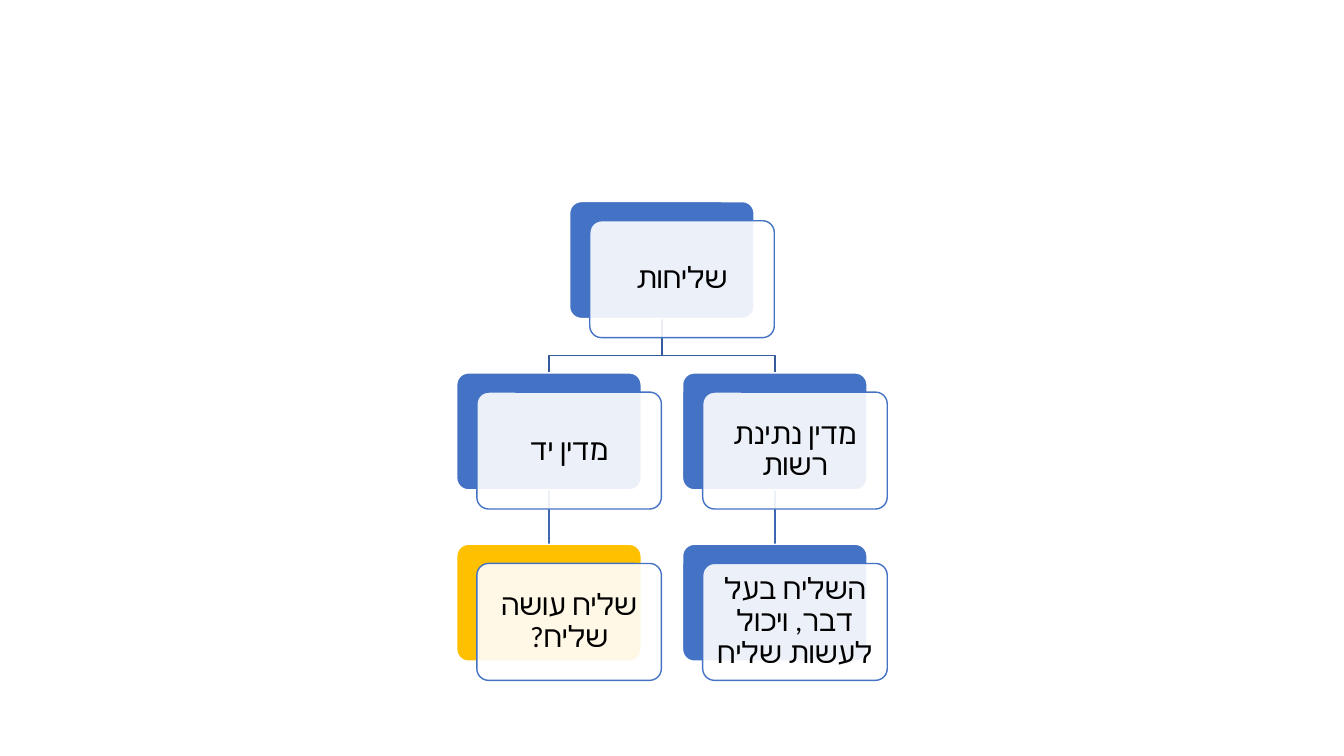
from lxml import etree
from pptx import Presentation
from pptx.dml.color import RGBColor
from pptx.enum.shapes import MSO_CONNECTOR, MSO_SHAPE
from pptx.enum.text import MSO_ANCHOR, PP_ALIGN
from pptx.oxml.ns import qn
from pptx.util import Inches, Pt

ROUNDED = MSO_SHAPE.ROUNDED_RECTANGLE
STRAIGHT = MSO_CONNECTOR.STRAIGHT
MIDDLE = MSO_ANCHOR.MIDDLE
CENTER = PP_ALIGN.CENTER

FONT = "Calibri"
BLUE, GOLD, WHITE, BLACK = "4472C4", "FFC000", "FFFFFF", "000000"
ROOT_LINK, CHILD_LINK = "365B9D", "3E67B2"

CARD_WIDTH, CARD_HEIGHT = 1.83, 1.16
CARD_OFFSET_X, CARD_OFFSET_Y = 0.2, 0.19
BEND_GAP = 0.17
TREE_LEFT, TREE_TOP = 4.53, 2.0
COLUMN_STEP, ROW_STEP = 2.24, 1.7

CARDS = [
    (0.5, 0, "שליחות", BLUE),
    (0, 1, "מדין יד", BLUE),
    (0, 2, "שליח עושה שליח?", GOLD),
    (1, 1, "מדין נתינת רשות", BLUE),
    (1, 2, "השליח בעל דבר, ויכול לעשות שליח", BLUE),
]


def color(value):
    return RGBColor.from_string(value)


def apply_format(target, values):
    for name, value in values.items():
        setattr(target, name, value)


def style_line(line, value):
    line.color.rgb = color(value)
    line.width = Pt(1)


def card_position(column, row):
    return TREE_LEFT + column * COLUMN_STEP, TREE_TOP + row * ROW_STEP


def add_panel(slide, left, top, fill, outline):
    panel = slide.shapes.add_shape(
        ROUNDED, Inches(left), Inches(top), Inches(CARD_WIDTH), Inches(CARD_HEIGHT))
    panel.adjustments[0] = 0.1
    panel.shadow.inherit = False
    panel.fill.solid()
    panel.fill.fore_color.rgb = color(fill)
    style_line(panel.line, outline)
    return panel


def write_label(panel, text):
    frame = panel.text_frame
    side_margin, edge_margin = Inches(0.07), Inches(0.09)
    apply_format(frame, {
        "word_wrap": True, "vertical_anchor": MIDDLE,
        "margin_left": side_margin, "margin_right": side_margin,
        "margin_top": edge_margin, "margin_bottom": edge_margin,
    })
    para = frame.paragraphs[0]
    apply_format(para, {"alignment": CENTER, "line_spacing": 0.9})
    para._p.get_or_add_pPr().set("rtl", "1")
    span = para.add_run()
    span.text = text
    apply_format(span.font, {"name": FONT, "size": Pt(21)})
    span.font.color.rgb = color(BLACK)
    complex_font = etree.SubElement(span._r.get_or_add_rPr(), qn("a:cs"))
    complex_font.set("typeface", FONT)


def add_card(slide, left, top, text, fill):
    add_panel(slide, left, top, fill, WHITE)
    front = add_panel(slide, left + CARD_OFFSET_X, top + CARD_OFFSET_Y, WHITE, BLUE)
    white = front.fill._xPr.find(qn("a:solidFill"))[0]
    etree.SubElement(white, qn("a:alpha")).set("val", "90000")
    write_label(front, text)


def add_root_link(slide, column):
    root_left, root_top = card_position(0.5, 0)
    child_left, child_top = card_position(column, 1)
    start_x = root_left + CARD_WIDTH / 2
    end_x = child_left + CARD_WIDTH / 2
    bend_y = child_top - BEND_GAP
    builder = slide.shapes.build_freeform(
        Inches(start_x), Inches(root_top + CARD_HEIGHT))
    points = [(start_x, bend_y), (end_x, bend_y), (end_x, child_top)]
    builder.add_line_segments(
        [(Inches(x), Inches(y)) for x, y in points], close=False)
    link = builder.convert_to_shape()
    link.shadow.inherit = False
    link.fill.background()
    style_line(link.line, ROOT_LINK)


def add_child_link(slide, column):
    left, top = card_position(column, 1)
    x = Inches(left + CARD_WIDTH / 2)
    link = slide.shapes.add_connector(
        STRAIGHT, x, Inches(top + CARD_HEIGHT), x, Inches(top + ROW_STEP))
    style_line(link.line, CHILD_LINK)
    etree.SubElement(link._element.spPr, qn("a:effectLst"))


def add_tree(slide):
    for column in (1, 0):
        add_child_link(slide, column)
        add_root_link(slide, column)
    for column, row, text, fill in CARDS:
        left, top = card_position(column, row)
        add_card(slide, left, top, text, fill)


def main():
    deck = Presentation()
    deck.slide_width = Inches(13.33)
    deck.slide_height = Inches(7.5)
    page = deck.slides.add_slide(deck.slide_layouts[6])
    add_tree(page)
    deck.save("out.pptx")


if __name__ == "__main__":
    main()
